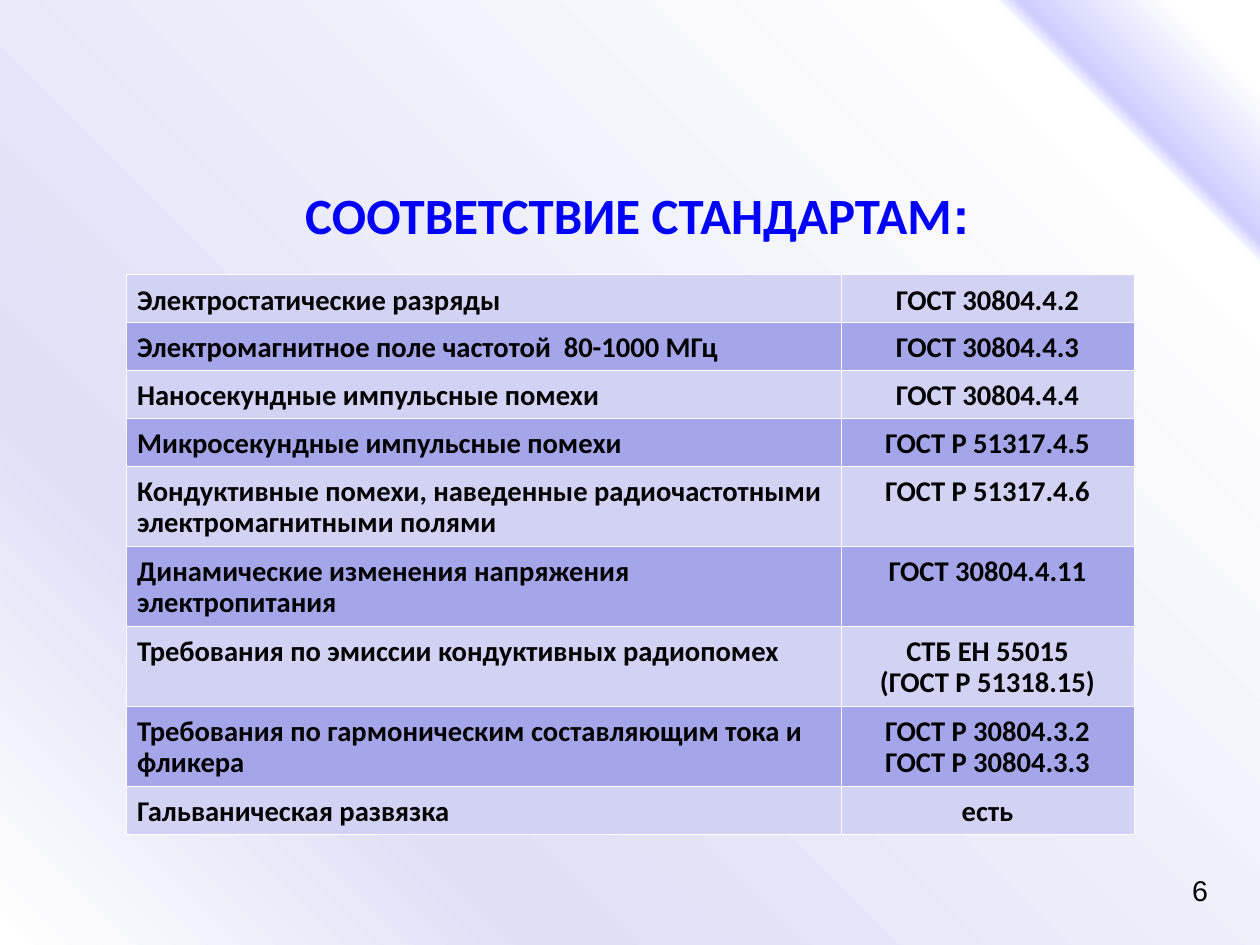
from dataclasses import dataclass

from pptx import Presentation
from pptx import oxml
from pptx import util as u
from pptx.dml import color
from pptx.enum import text
from pptx.oxml import ns

BLUE, BLACK, WHITE = "0000FF", "000000", "FFFFFF"
BANDS = ("D2D2F4", "A5A5E9")
COLUMNS = (6.26, 2.56)
SINGLE, DOUBLE = 0.42, 0.7
BORDER_PT = 0.06
BACKGROUND = ((4, "FFFFFF"), (11, "CFCFFF"), (12, "FFFFFF"), (75, "DFDFF7"), (100, "FFFFFF"))


@dataclass
class Standard:
    requirement: str
    document: str
    height: float = SINGLE


STANDARDS = (
    Standard("Электростатические разряды", "ГОСТ 30804.4.2"),
    Standard("Электромагнитное поле частотой  80-1000 МГц", "ГОСТ 30804.4.3"),
    Standard("Наносекундные импульсные помехи", "ГОСТ 30804.4.4"),
    Standard("Микросекундные импульсные помехи", "ГОСТ Р 51317.4.5"),
    Standard("Кондуктивные помехи, наведенные радиочастотными электромагнитными полями",
             "ГОСТ Р 51317.4.6", DOUBLE),
    Standard("Динамические изменения напряжения электропитания", "ГОСТ 30804.4.11", DOUBLE),
    Standard("Требования по эмиссии кондуктивных радиопомех",
             "СТБ ЕН 55015\n(ГОСТ Р 51318.15)", DOUBLE),
    Standard("Требования по гармоническим составляющим тока и фликера",
             "ГОСТ Р 30804.3.2\nГОСТ Р 30804.3.3", DOUBLE),
    Standard("Гальваническая развязка", "есть"),
)


def rgb(value: str) -> color.RGBColor:
    return color.RGBColor.from_string(value)


def add_run(p, words: str, *, size: float = 18, font: str = "Calibri",
            fill: str = BLACK, bold: bool = True) -> None:
    r = p.add_run()
    r.text = words
    r.font.size = u.Pt(size)
    r.font.name = font
    r.font.bold = bold
    r.font.color.rgb = rgb(fill)


def set_margins(box, left: float, top: float, right: float, bottom: float) -> None:
    box.margin_left, box.margin_top = u.Inches(left), u.Inches(top)
    box.margin_right, box.margin_bottom = u.Inches(right), u.Inches(bottom)


def paint_background(s) -> None:
    s.background.fill.gradient()
    grad = s.element.find(".//" + ns.qn("a:gradFill"))
    stops = "".join(f'<a:gs pos="{pos * 1000}"><a:srgbClr val="{value}"/></a:gs>'
                    for pos, value in BACKGROUND)
    grad.getparent().replace(grad, oxml.parse_xml(
        f'<a:gradFill {ns.nsdecls("a")} rotWithShape="1"><a:gsLst>{stops}</a:gsLst>'
        '<a:path path="circle"><a:fillToRect l="100000" b="100000"/></a:path></a:gradFill>'))


def add_text_box(s, left: float, top: float, width: float, height: float):
    sp = s.shapes.add_textbox(u.Inches(left), u.Inches(top), u.Inches(width), u.Inches(height))
    sp.text_frame.word_wrap = True
    return sp.text_frame


def add_title(s) -> None:
    tf = add_text_box(s, 0.79, 1.61, 9.45, 0.6)
    tf.auto_size = text.MSO_AUTO_SIZE.SHAPE_TO_FIT_TEXT
    p = tf.paragraphs[0]
    p.alignment = text.PP_ALIGN.CENTER
    p.line_spacing = 0.93
    p.space_after = u.Pt(18)
    ppr = p._p.get_or_add_pPr()
    ppr.set("marL", str(u.Inches(0.47)))
    ppr.set("indent", str(u.Inches(-0.35)))
    add_run(p, "СООТВЕТСТВИЕ СТАНДАРТАМ", size=32, fill=BLUE)
    add_run(p, ":", size=32, font="Arial", fill=BLUE)


def add_number(s) -> None:
    tf = add_text_box(s, 10.43, 7.68, 0.39, 0.31)
    set_margins(tf, 0, 0, 0, 0)
    p = tf.paragraphs[0]
    p.line_spacing = 0.87
    add_run(p, "6", font="Arial", bold=False)


def add_borders(cell) -> None:
    tcpr = cell._tc.get_or_add_tcPr()
    for i, side in enumerate(("lnL", "lnR", "lnT", "lnB")):
        tcpr.insert(i, oxml.parse_xml(
            f'<a:{side} {ns.nsdecls("a")} w="{u.Pt(BORDER_PT)}"><a:solidFill>'
            f'<a:srgbClr val="{WHITE}"/></a:solidFill></a:{side}>'))


def fill_cell(cell, words: str, band: str, align) -> None:
    set_margins(cell, 0.1, 0.1, 0.1, 0.05)
    cell.fill.solid()
    cell.fill.fore_color.rgb = rgb(band)
    add_borders(cell)
    tf = cell.text_frame
    for i, line in enumerate(words.split("\n")):
        p = tf.add_paragraph() if i else tf.paragraphs[0]
        p.alignment = align
        p.line_spacing = 0.87
        add_run(p, line)


def add_standards(s) -> None:
    height = sum(row.height for row in STANDARDS)
    table = s.shapes.add_table(len(STANDARDS), len(COLUMNS), u.Inches(1.1), u.Inches(2.4),
                               u.Inches(sum(COLUMNS)), u.Inches(height)).table
    table.first_row = table.horz_banding = False
    for column, width in zip(table.columns, COLUMNS):
        column.width = u.Inches(width)
    for i, row in enumerate(STANDARDS):
        table.rows[i].height = u.Inches(row.height)
        band = BANDS[i % 2]
        fill_cell(table.cell(i, 0), row.requirement, band, text.PP_ALIGN.LEFT)
        fill_cell(table.cell(i, 1), row.document, band, text.PP_ALIGN.CENTER)


def main() -> None:
    prs = Presentation()
    prs.slide_width, prs.slide_height = u.Cm(28), u.Cm(21)
    s = prs.slides.add_slide(prs.slide_layouts[6])
    paint_background(s)
    add_number(s)
    add_title(s)
    add_standards(s)
    prs.save("out.pptx")


if __name__ == "__main__":
    main()
